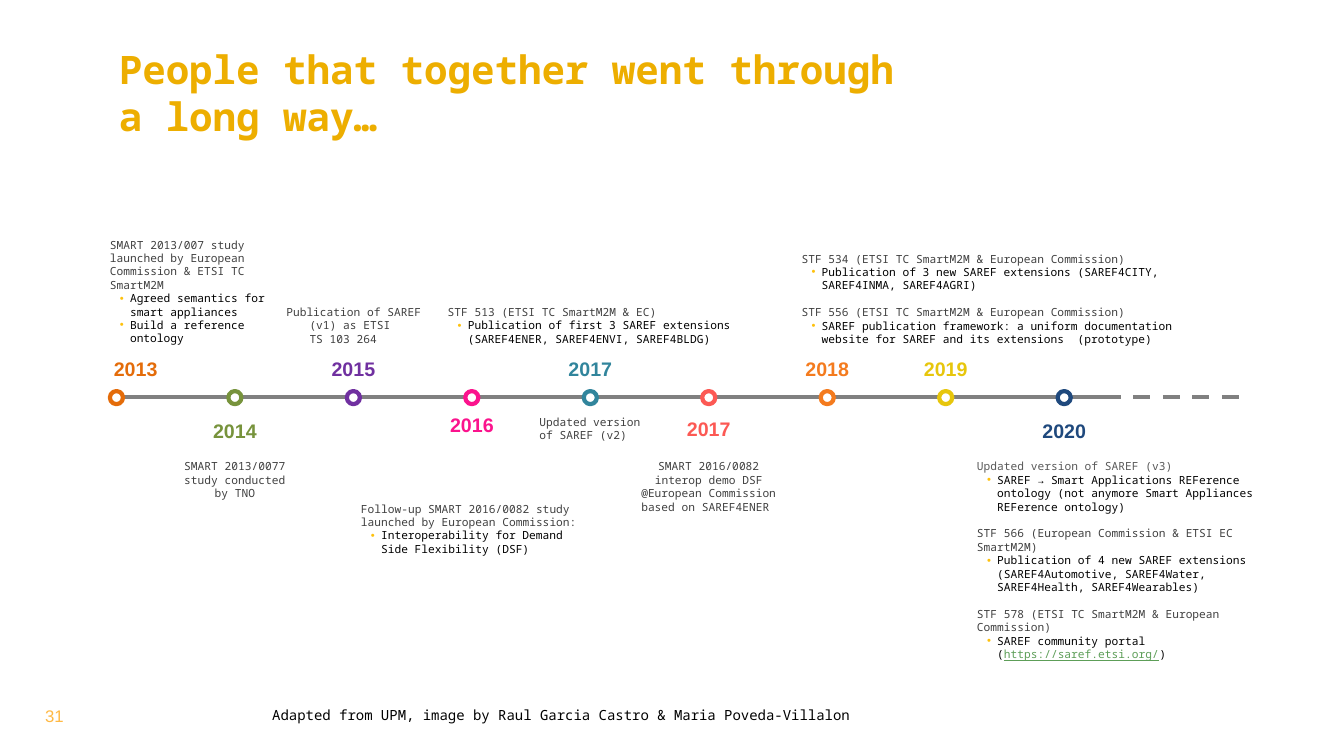
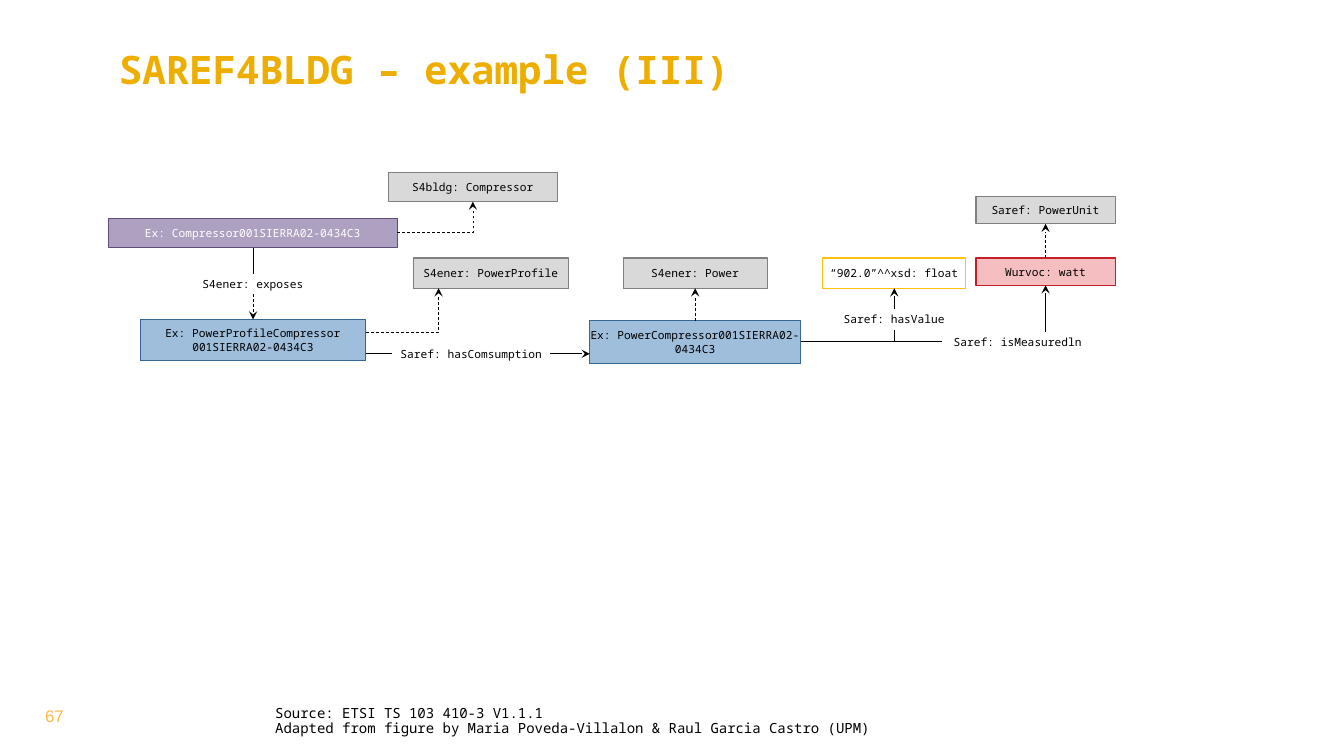
from lxml import etree
from pptx import Presentation
from pptx import util as u
from pptx.dml.color import RGBColor
from pptx.enum import dml, shapes, text
from pptx.oxml import ns

Inches = u.Inches

# Shared style
MONO, SANS = "Noto Sans Mono", "Arial"
GOLD = RGBColor(0xED, 0xAE, 0x00)
AMBER = RGBColor(0xFF, 0xB9, 0x44)
YELLOW = RGBColor(0xFE, 0xC1, 0x0D)
BLACK = RGBColor(0x00, 0x00, 0x00)
WHITE = RGBColor(0xFF, 0xFF, 0xFF)
DARK_GRAY = RGBColor(0x40, 0x40, 0x40)
MID_GRAY = RGBColor(0x59, 0x59, 0x59)
GRAY = RGBColor(0x80, 0x80, 0x80)
LIGHT_GRAY = RGBColor(0xD9, 0xD9, 0xD9)
LINK_GREEN = RGBColor(0x5D, 0x9E, 0x58)
BLUE, DARK_BLUE = RGBColor(0x9E, 0xBE, 0xDB), RGBColor(0x36, 0x66, 0x92)
PURPLE, DARK_PURPLE = RGBColor(0xAE, 0xA0, 0xC1), RGBColor(0x5F, 0x4D, 0x77)
PINK, RED = RGBColor(0xF5, 0xBE, 0xC1), RGBColor(0xC4, 0x1E, 0x26)

LEFT, CENTER = text.PP_ALIGN.LEFT, text.PP_ALIGN.CENTER
TOP, MIDDLE, BOTTOM = (text.MSO_ANCHOR.TOP, text.MSO_ANCHOR.MIDDLE,
                       text.MSO_ANCHOR.BOTTOM)
RECTANGLE, OVAL = shapes.MSO_SHAPE.RECTANGLE, shapes.MSO_SHAPE.OVAL
SIDE_TOP, SIDE_LEFT, SIDE_BOTTOM, SIDE_RIGHT = range(4)

# Timeline: year, colour, top of the year relative to the axis
YEARS = [
    ("2013", RGBColor(0xE4, 0x6C, 0x0A), -0.44),
    ("2014", RGBColor(0x77, 0x93, 0x3C), 0.17),
    ("2015", RGBColor(0x70, 0x30, 0xA0), -0.44),
    ("2016", RGBColor(0xFB, 0x13, 0x8D), 0.11),
    ("2017", RGBColor(0x31, 0x85, 0x9C), -0.44),
    ("2017", RGBColor(0xFC, 0x59, 0x54), 0.15),
    ("2018", RGBColor(0xF4, 0x7B, 0x1E), -0.44),
    ("2019", RGBColor(0xE7, 0xC6, 0x0C), -0.44),
    ("2020", RGBColor(0x1F, 0x49, 0x7D), 0.17),
]
YEAR_STEP = 9.4 / 8

# Notes: box relative to the axis start, fill, alignment, paragraphs of (kind, text)
NOTES = [
    ((0, -1.58, 1.56, 1.08), None, LEFT, [
        ("head", "SMART 2013/007 study launched by European Commission & ETSI TC SmartM2M"),
        ("bullet", "Agreed semantics for smart appliances"),
        ("bullet", "Build a reference ontology")]),
    ((0.67, 0.62, 1.14, 0.4), None, CENTER, [
        ("head", "SMART 2013/0077 study conducted by TNO")]),
    ((1.75, -0.91, 1.47, 0.4), None, LEFT, [
        ("hanging", "Publication of SAREF (v1) as ETSI\vTS 103 264")]),
    ((2.49, 1.04, 2.2, 0.54), None, LEFT, [
        ("head", "Follow-up SMART 2016/0082 study launched by European Commission:"),
        ("bullet", "Interoperability for Demand Side Flexibility (DSF)")]),
    ((3.35, -0.91, 2.83, 0.4), None, LEFT, [
        ("head", "STF 513 (ETSI TC SmartM2M & EC)"),
        ("bullet", "Publication of first 3 SAREF extensions (SAREF4ENER, SAREF4ENVI, SAREF4BLDG)")]),
    ((4.26, 0.18, 1.03, 0.27), None, LEFT, [
        ("head", "Updated version of SAREF (v2)")]),
    ((5.2, 0.62, 1.48, 0.54), None, CENTER, [
        ("head", "SMART 2016/0082 interop demo DSF @European Commission based on SAREF4ENER ")]),
    ((6.86, -1.44, 3.99, 0.93), None, LEFT, [
        ("head", "STF 534 (ETSI TC SmartM2M & European Commission)"),
        ("bullet", "Publication of 3 new SAREF extensions (SAREF4CITY, SAREF4INMA, SAREF4AGRI)"),
        ("head", "STF 556 (ETSI TC SmartM2M & European Commission)"),
        ("bullet", "SAREF publication framework: a uniform documentation website for SAREF "
                   "and its extensions  (prototype)")]),
    ((8.6, 0.62, 3.2, 1.88), WHITE, LEFT, [
        ("light head", "Updated version of SAREF (v3)"),
        ("bullet", "SAREF → Smart Applications REFerence ontology "
                   "(not anymore Smart Appliances REFerence ontology)"),
        ("head", "STF 566 (European Commission & ETSI EC SmartM2M)"),
        ("bullet", "Publication of 4 new SAREF extensions "
                   "(SAREF4Automotive, SAREF4Water, SAREF4Health, SAREF4Wearables)"),
        ("head", "STF 578 (ETSI TC SmartM2M & European Commission)"),
        ("bullet", "SAREF community portal (", "https://saref.etsi.org/", ")")]),
]
NOTE_COLORS = {"head": DARK_GRAY, "hanging": DARK_GRAY,
               "light head": MID_GRAY, "bullet": BLACK}

# Diagram boxes: fill, line and text colour for each style
BOX_STYLES = {
    "class": (LIGHT_GRAY, GRAY, BLACK),
    "device": (PURPLE, DARK_PURPLE, WHITE),
    "instance": (BLUE, DARK_BLUE, BLACK),
    "literal": (None, YELLOW, BLACK),
    "unit": (PINK, RED, BLACK),
    "label": (None, None, BLACK),
}
BOXES = {
    "compressor class": ("class", (2.77, 0, 1.68, 0.29), "S4bldg: Compressor"),
    "compressor": ("device", (0, 0.46, 2.86, 0.29), "Ex: Compressor001SIERRA02-0434C3"),
    "profile class": ("class", (3.02, 0.85, 1.54, 0.3), "S4ener: PowerProfile"),
    "profile": ("instance", (0.31, 1.46, 2.24, 0.41),
                "Ex: PowerProfileCompressor\v001SIERRA02-0434C3"),
    "power class": ("class", (5.1, 0.85, 1.43, 0.3), "S4ener: Power"),
    "power": ("instance", (4.77, 1.47, 2.09, 0.43), "Ex: PowerCompressor001SIERRA02-0434C3"),
    "value": ("literal", (7.08, 0.85, 1.42, 0.3), "“902.0”^^xsd: float"),
    "watt": ("unit", (8.6, 0.85, 1.38, 0.27), "Wurvoc: watt"),
    "unit class": ("class", (8.6, 0.24, 1.38, 0.27), "Saref: PowerUnit"),
    "exposes": ("label", (0.86, 1.01, 1.14, 0.2), "S4ener: exposes"),
    "consumption": ("label", (2.81, 1.7, 1.57, 0.2), "Saref: hasComsumption"),
    "has value": ("label", (7.14, 1.36, 1.3, 0.2), "Saref: hasValue"),
    "measured": ("label", (8.26, 1.58, 1.51, 0.2), "Saref: isMeasuredln"),
}
# Links: start, end (a point, or a box and its side), arrow, dashed, elbow
LINKS = [
    (("compressor", SIDE_BOTTOM), ("exposes", SIDE_TOP), False, False, False),
    (("exposes", SIDE_BOTTOM), ("profile", SIDE_TOP), True, True, False),
    ((2.55, 1.8), ("consumption", SIDE_LEFT), False, False, False),
    (("consumption", SIDE_RIGHT), (4.77, 1.8), True, False, False),
    (("power", SIDE_TOP), ("power class", SIDE_BOTTOM), True, True, False),
    (("has value", SIDE_TOP), ("value", SIDE_BOTTOM), True, False, False),
    ((9.29, 1.58), ("watt", SIDE_BOTTOM), True, False, False),
    (("watt", SIDE_TOP), ("unit class", SIDE_BOTTOM), True, True, False),
    ((2.86, 0.6), (3.61, 0.29), True, True, True),
    ((2.55, 1.59), (3.27, 1.15), True, True, True),
    ((6.86, 1.68), (7.79, 1.56), False, False, True),
    ((8.26, 1.68), (7.79, 1.56), False, False, True),
]


def set_font(font, size, color, name=MONO, bold=False):
    font.name, font.size, font.bold = name, u.Pt(size), bold
    font.color.rgb = color


def set_frame(shape, anchor=TOP, inset=(0, 0)):
    frame = shape.text_frame
    frame.word_wrap, frame.vertical_anchor = True, anchor
    frame.margin_left = frame.margin_right = Inches(inset[0])
    frame.margin_top = frame.margin_bottom = Inches(inset[1])
    return frame


def write(shape, content, size, color, name=MONO, bold=False,
          align=CENTER, anchor=MIDDLE, inset=(0, 0)):
    """Write one paragraph in a single style."""
    paragraph = set_frame(shape, anchor, inset).paragraphs[0]
    paragraph.text, paragraph.alignment = content, align
    set_font(paragraph.font, size, color, name, bold)


def add_text_box(slide, box):
    return slide.shapes.add_textbox(*map(Inches, box))


def add_block(slide, kind, box, fill, line=None, line_width=0):
    shape = slide.shapes.add_shape(kind, *map(Inches, box))
    shape.shadow.inherit = False
    if fill is None:
        shape.fill.background()
    else:
        shape.fill.solid()
        shape.fill.fore_color.rgb = fill
    if line is None:
        shape.line.fill.background()
    else:
        shape.line.color.rgb, shape.line.width = line, u.Pt(line_width)
    return shape


def add_line(slide, start, end, color, width, dashed=False, arrow=False, elbow=False):
    kind = shapes.MSO_CONNECTOR.ELBOW if elbow else shapes.MSO_CONNECTOR.STRAIGHT
    connector = slide.shapes.add_connector(kind, *map(Inches, start + end))
    connector.line.color.rgb, connector.line.width = color, u.Pt(width)
    if dashed:
        connector.line.dash_style = dml.MSO_LINE.DASH
    properties = connector._element.spPr
    if arrow:
        etree.SubElement(properties.find(ns.qn("a:ln")), ns.qn("a:tailEnd"), type="stealth")
    if elbow:
        properties.find(ns.qn("a:prstGeom")).set("prst", "bentConnector2")
    etree.SubElement(properties, ns.qn("a:effectLst"))
    return connector


def add_base(presentation, title, number, footer_box, footer_lines):
    """Add a slide with its title, number and footer."""
    slide = presentation.slides.add_slide(presentation.slide_layouts[6])
    write(add_text_box(slide, (1.08, 0.4, 9.98, 0.9)), title, 28, GOLD, bold=True,
          align=LEFT, anchor=TOP, inset=(0.1, 0.05))
    write(add_text_box(slide, (0, 6.71, 1.08, 0.79)), number, 12, AMBER, SANS)
    frame = set_frame(add_text_box(slide, footer_box), BOTTOM)
    frame.text = "\n".join(footer_lines)
    for paragraph in frame.paragraphs:
        paragraph.line_spacing = 0.9
        set_font(paragraph.font, 10, BLACK)
    return slide


def set_indent(paragraph, margin, indent):
    properties = paragraph._p.get_or_add_pPr()
    properties.set("marL", str(Inches(margin)))
    properties.set("indent", str(Inches(indent)))
    return properties


def add_note(slide, box, fill, align, content):
    """Add one timeline note of headings and bullets."""
    shape = add_block(slide, RECTANGLE, box, fill) if fill else add_text_box(slide, box)
    frame = set_frame(shape)
    for index, (kind, words, *link) in enumerate(content):
        paragraph = frame.add_paragraph() if index else frame.paragraphs[0]
        paragraph.text, paragraph.alignment = words, align
        if kind == "bullet":
            properties = set_indent(paragraph, 0.2, -0.1)
            bullet_color = etree.SubElement(properties, ns.qn("a:buClr"))
            etree.SubElement(bullet_color, ns.qn("a:srgbClr"), val=str(YELLOW))
            etree.SubElement(properties, ns.qn("a:buFont"), typeface=SANS)
            etree.SubElement(properties, ns.qn("a:buChar"), char="•")
        elif kind == "hanging":
            set_indent(paragraph, 0.23, -0.23)
        elif index:
            paragraph.space_before = u.Pt(9.6)
        set_font(paragraph.font, 8, NOTE_COLORS[kind])
        if link:
            address, closing = (paragraph.add_run() for _ in link)
            address.text, closing.text = link
            address.font.color.rgb, address.font.underline = LINK_GREEN, True


def add_timeline(slide, left, axis):
    """Draw the notes, the axis and its years from the axis start."""
    for (x, y, width, height), fill, align, content in NOTES:
        add_note(slide, (left + x, axis + y, width, height), fill, align, content)
    add_line(slide, (left + 9.86, axis), (left + 11.22, axis), GRAY, 3, dashed=True)
    add_line(slide, (left, axis), (left + 9.9, axis), GRAY, 3)
    for index, (year, color, offset) in enumerate(YEARS):
        x = left + index * YEAR_STEP
        add_block(slide, OVAL, (x, axis - 0.06, 0.13, 0.13), WHITE, color, 3)
        label = add_block(slide, RECTANGLE,
                          (max(x - 0.19, left), axis + offset, 0.51, 0.32), WHITE)
        write(label, year, 14, color, SANS, bold=True)


def add_diagram(slide, left, top):
    """Draw the boxes, labels and links from the top left corner."""
    placed = {}
    for name, (style, (x, y, width, height), words) in BOXES.items():
        fill, line, color = BOX_STYLES[style]
        box = (left + x, top + y, width, height)
        if style == "label":
            placed[name] = add_text_box(slide, box)
        else:
            placed[name] = add_block(slide, RECTANGLE, box, fill, line, 0.75)
        write(placed[name], words, 8, color)

    for start, end, arrow, dashed, elbow in LINKS:
        joined = [point[0] in placed for point in (start, end)]
        points = [(left, top) if join else (left + point[0], top + point[1])
                  for join, point in zip(joined, (start, end))]
        connector = add_line(slide, *points, BLACK, 0.5, dashed, arrow, elbow)
        if joined[0]:
            connector.begin_connect(placed[start[0]], start[1])
        if joined[1]:
            connector.end_connect(placed[end[0]], end[1])


def main():
    presentation = Presentation()
    presentation.slide_width, presentation.slide_height = Inches(13.33), Inches(7.5)

    slide = add_base(presentation, "People that together went through\va long way…", "31",
                     (2.7, 7.03, 8.36, 0.15),
                     ["Adapted from UPM, image by Raul Garcia Castro & Maria Poveda-Villalon"])
    add_timeline(slide, 1.09, 3.94)

    slide = add_base(presentation, "SAREF4BLDG – example (III)", "67",
                     (2.73, 7.01, 8.36, 0.3),
                     ["Source: ETSI TS 103 410-3 V1.1.1",
                      "Adapted from figure by Maria Poveda-Villalon & Raul Garcia Castro (UPM)"])
    add_diagram(slide, 1.08, 1.71)

    presentation.save("out.pptx")


if __name__ == "__main__":
    main()
